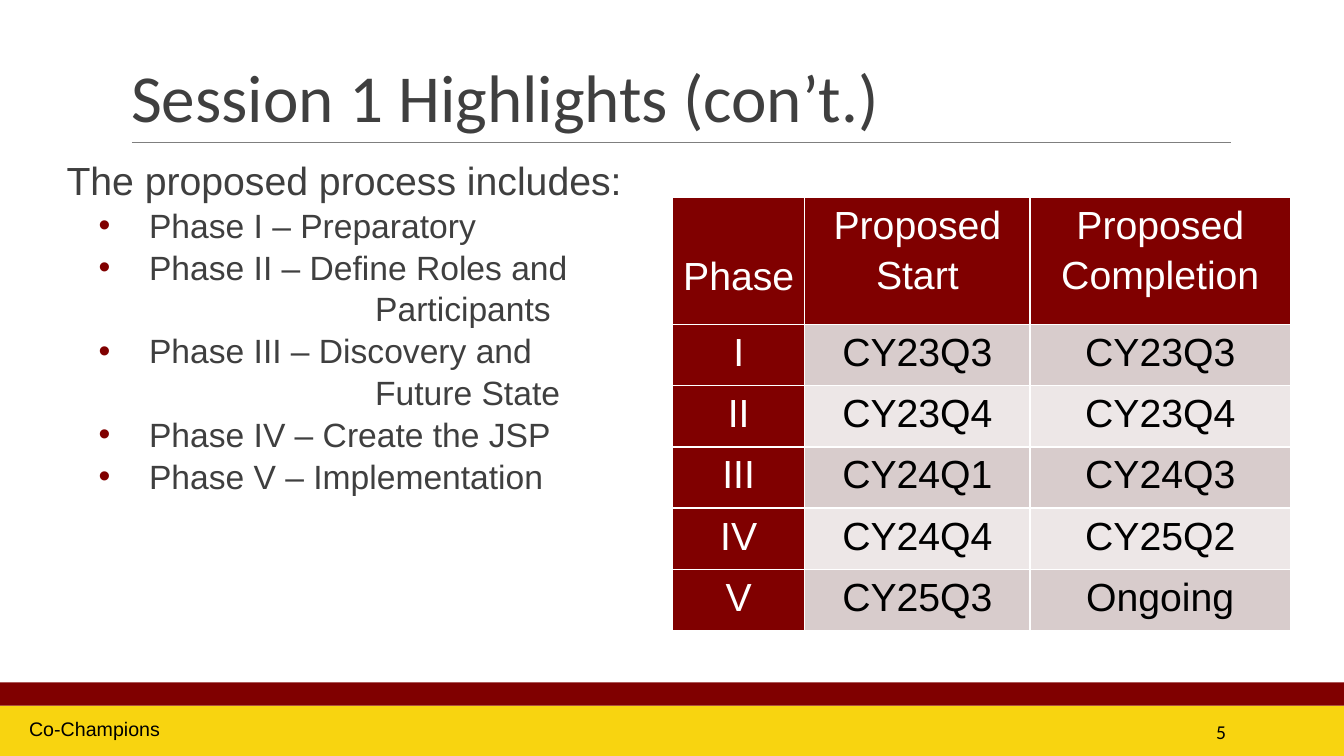
from lxml.etree import SubElement
from pptx import Presentation
from pptx.dml.color import RGBColor as RGB
from pptx.enum.shapes import MSO_CONNECTOR as CONN, MSO_SHAPE as SHAPE
from pptx.enum.text import MSO_ANCHOR as ANCHOR, PP_ALIGN as ALIGN
from pptx.oxml.ns import qn
from pptx.util import Pt

COLORS = {
    "gold": "F8D410", "maroon": "800000", "rule": "7F7F7F", "text": "3F3F3F",
    "black": "000000", "white": "FFFFFF", "band_dark": "D8CCCC", "band_light": "EDE7E7",
}
BULLET_INDENT = (77, -36)
CONTINUED_INDENT = (238.5, 0)
PHASES = [
    ("Phase I – Preparatory", None),
    ("Phase II – Define Roles and", "Participants"),
    ("Phase III – Discovery and", "Future State"),
    ("Phase IV – Create the JSP", None),
    ("Phase V – Implementation", None),
]
SCHEDULE = [
    ("Phase", "Proposed Start", "Proposed Completion"),
    ("I", "CY23Q3", "CY23Q3"),
    ("II", "CY23Q4", "CY23Q4"),
    ("III", "CY24Q1", "CY24Q3"),
    ("IV", "CY24Q4", "CY25Q2"),
    ("V", "CY25Q3", "Ongoing"),
]


class SlideBuilder:
    def __init__(self, slide, font="Arial"):
        self.slide = slide
        self.font = font

    def color(self, name):
        return RGB.from_string(COLORS[name])

    def run(self, p, text, size, color, font=None):
        r = p.add_run()
        r.text = text
        r.font.size = Pt(size)
        r.font.name = font or self.font
        r.font.color.rgb = self.color(color)

    def title(self, box, text):
        s = self.slide.shapes.title
        s.left, s.top, s.width, s.height = map(Pt, box)
        tf = s.text_frame
        tf.word_wrap = True
        tf.vertical_anchor = ANCHOR.BOTTOM
        p = tf.paragraphs[0]
        p.alignment = ALIGN.LEFT
        p.line_spacing = 0.85
        self.run(p, text, 48, "text", "Calibri")

    def band(self, box, color):
        s = self.slide.shapes.add_shape(SHAPE.RECTANGLE, *map(Pt, box))
        s.shadow.inherit = False
        s.fill.solid()
        s.fill.fore_color.rgb = self.color(color)
        s.line.fill.background()

    def rule(self, x1, x2, y):
        line = self.slide.shapes.add_connector(CONN.STRAIGHT, Pt(x1), Pt(y), Pt(x2), Pt(y))
        line.line.color.rgb = self.color("rule")
        line.line.width = Pt(0.75)
        SubElement(line._element.spPr, qn("a:effectLst"))

    def text_frame(self, box, anchor=ANCHOR.TOP):
        tf = self.slide.shapes.add_textbox(*map(Pt, box)).text_frame
        tf.word_wrap = True
        tf.vertical_anchor = anchor
        return tf

    def label(self, box, text, font=None, align=ALIGN.LEFT, anchor=ANCHOR.TOP):
        p = self.text_frame(box, anchor).paragraphs[0]
        p.alignment = align
        self.run(p, text, 14, "black", font)

    def indent(self, p, margin, first_line, bullet=False):
        pPr = p._p.get_or_add_pPr()
        pPr.set("marL", str(Pt(margin)))
        pPr.set("indent", str(Pt(first_line)))
        if bullet:
            bu_color = SubElement(pPr, qn("a:buClr"))
            SubElement(bu_color, qn("a:srgbClr"), val=COLORS["maroon"])
            SubElement(pPr, qn("a:buFont"), typeface=self.font)
            SubElement(pPr, qn("a:buChar"), char="•")

    def phase_list(self, box, intro, phases):
        """Intro line, then bullets whose second line may be set further in."""
        tf = self.text_frame(box)
        tf.margin_left = tf.margin_right = 0
        p = tf.paragraphs[0]
        p.line_spacing = 1.04
        self.indent(p, 18, 0)
        self.run(p, intro, 28, "text")
        for phase, continued in phases:
            lines = [(phase, BULLET_INDENT, True)]
            if continued:
                lines.append((continued, CONTINUED_INDENT, False))
            for text, indent, bullet in lines:
                p = tf.add_paragraph()
                p.line_spacing = 1.04
                self.indent(p, *indent, bullet)
                self.run(p, text, 24, "text")

    def cell(self, cell, text, fill, color):
        cell.margin_left = cell.margin_right = Pt(5)
        cell.margin_top = cell.margin_bottom = 0
        p = cell.text_frame.paragraphs[0]
        p.alignment = ALIGN.CENTER
        p.line_spacing = 1.15
        self.run(p, text, 28, color)
        tcPr = cell._tc.get_or_add_tcPr()
        for side in ("lnL", "lnR", "lnT", "lnB"):
            ln = SubElement(tcPr, qn(f"a:{side}"), w=str(Pt(1)))
            ln_fill = SubElement(ln, qn("a:solidFill"))
            SubElement(ln_fill, qn("a:srgbClr"), val=COLORS["white"])
        cell.fill.solid()
        cell.fill.fore_color.rgb = self.color(fill)

    def table(self, left, top, widths, heights, rows):
        frame = self.slide.shapes.add_table(
            len(rows), len(widths), Pt(left), Pt(top), Pt(sum(widths)), Pt(sum(heights)))
        table = frame.table
        for column, width in zip(table.columns, widths):
            column.width = Pt(width)
        for i, (height, values) in enumerate(zip(heights, rows)):
            table.rows[i].height = Pt(height)
            band = "band_dark" if i % 2 else "band_light"
            for j, value in enumerate(values):
                heading = i == 0 or j == 0
                self.cell(table.cell(i, j), value, "maroon" if heading else band,
                          "white" if heading else "black")
        return table


def main():
    prs = Presentation()
    prs.slide_width, prs.slide_height = Pt(960), Pt(540)
    s = SlideBuilder(prs.slides.add_slide(prs.slide_layouts[5]))

    s.band((0, 504, 960, 36), "gold")
    s.band((0, 487.5, 960, 16.5), "maroon")
    s.rule(94.3, 879, 101.5)
    s.title((86.4, 22.3, 792, 78.5), "Session 1 Highlights (con’t.)")
    s.phase_list((29.5, 106.5, 425, 309.6), "The proposed process includes:", PHASES)
    s.label((779.8, 508.3, 103, 28.8), "5", "Calibri", ALIGN.RIGHT, ANCHOR.MIDDLE)
    table = s.table(480.5, 141.2, (94.3, 161, 186), (90.7,) + (43.7,) * 5, SCHEDULE)
    # "Phase" sits level with the second line of the other headings
    table.cell(0, 0).margin_top = Pt(36)
    s.label((13.7, 508.3, 163.5, 24.5), "Co-Champions")

    prs.save("out.pptx")


if __name__ == "__main__":
    main()
